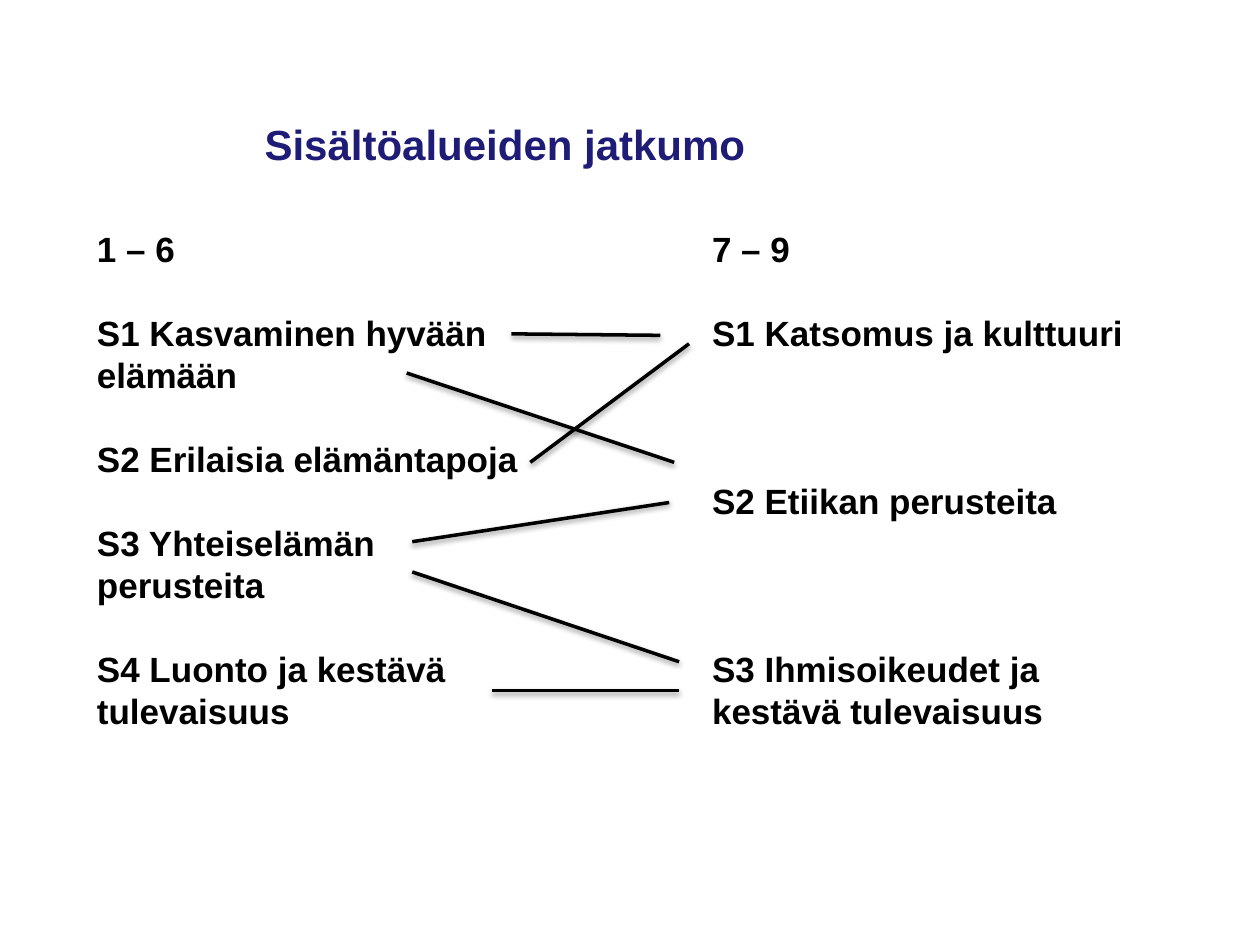
"""Build the slide on how the content areas continue from grades 1–6 to 7–9."""
from lxml import etree
from pptx import Presentation
from pptx.dml.color import RGBColor
from pptx.enum.shapes import MSO_CONNECTOR
from pptx.enum.text import MSO_ANCHOR, MSO_AUTO_SIZE, PP_ALIGN
from pptx.oxml import parse_xml
from pptx.oxml.ns import qn
from pptx.util import Cm, Pt

STRAIGHT = MSO_CONNECTOR.STRAIGHT
TOP, BOTTOM = MSO_ANCHOR.TOP, MSO_ANCHOR.BOTTOM
NO_AUTOFIT = MSO_AUTO_SIZE.NONE
LEFT = PP_ALIGN.LEFT

NAVY = RGBColor(0x1E, 0x1C, 0x77)
BLACK = RGBColor(0, 0, 0)
FONT = "Arial"
LINE_PITCH = 24

SHADOW = (
    '<a:effectLst xmlns:a="http://schemas.openxmlformats.org/drawingml/2006/main">'
    '<a:outerShdw blurRad="40000" dist="20000" dir="5400000" rotWithShape="0">'
    '<a:srgbClr val="000000"><a:alpha val="38000"/></a:srgbClr>'
    '</a:outerShdw></a:effectLst>'
)

COLUMN_TOP, COLUMN_WIDTH, COLUMN_HEIGHT = 4.45, 9.6, 13.77
GRADES_1_6 = [
    ("1 – 6", 0),
    ("S1 Kasvaminen hyvään elämään", 1),
    ("S2 Erilaisia elämäntapoja", 1),
    ("S3 Yhteiselämän perusteita", 1),
    ("S4 Luonto ja kestävä tulevaisuus", 1),
]
GRADES_7_9 = [
    ("7 – 9", 0),
    ("S1 Katsomus ja kulttuuri", 1),
    ("S2 Etiikan perusteita", 3),
    ("S3 Ihmisoikeudet ja kestävä tulevaisuus", 3),
]
CONTINUITIES = [
    (9.91, 13.92, 13.69, 13.92),
    (13.69, 13.34, 8.31, 11.53),
    (8.31, 10.92, 13.49, 10.13),
    (10.69, 9.32, 13.89, 6.93),
    (13.59, 9.32, 8.2, 7.52),
    (13.31, 6.76, 10.31, 6.73),
]


def place(holder, left, top, width, height, anchor):
    holder.left, holder.top = Cm(left), Cm(top)
    holder.width, holder.height = Cm(width), Cm(height)
    frame = holder.text_frame
    frame.word_wrap = True
    frame.auto_size = NO_AUTOFIT
    frame.vertical_anchor = anchor
    return frame


def format_paragraph(paragraph, size, color, pitch, gap=0):
    paragraph.alignment = LEFT
    paragraph.line_spacing = Pt(pitch)
    paragraph.space_before = Pt(gap)
    paragraph.space_after = Pt(0)
    for run in paragraph.runs:
        run.font.name = FONT
        run.font.size = Pt(size)
        run.font.bold = True
        run.font.color.rgb = color


def remove_bullet(paragraph):
    properties = paragraph._p.get_or_add_pPr()
    properties.set("marL", "0")
    properties.set("indent", "0")
    etree.SubElement(properties, qn("a:buNone"))


def fill_title(title):
    frame = place(title, 5.08, 0.43, 19.48, 3.1, BOTTOM)
    frame.text = "Sisältöalueiden jatkumo"
    format_paragraph(frame.paragraphs[0], 24, NAVY, 30)


def fill_column(body, left, areas):
    frame = place(body, left, COLUMN_TOP, COLUMN_WIDTH, COLUMN_HEIGHT, TOP)
    frame.text = "\n".join(area for area, _ in areas)
    for paragraph, (_, lines_before) in zip(frame.paragraphs, areas):
        remove_bullet(paragraph)
        format_paragraph(paragraph, 20, BLACK, LINE_PITCH, lines_before * LINE_PITCH)


def add_continuity(slide, ends):
    link = slide.shapes.add_connector(STRAIGHT, *map(Cm, ends))
    link.line.color.rgb = BLACK
    link.line.width = Pt(2)
    link._element.spPr.append(parse_xml(SHADOW))


def main():
    deck = Presentation()
    deck.slide_width, deck.slide_height = Cm(25.4), Cm(19.05)
    slide = deck.slides.add_slide(deck.slide_layouts[3])
    title, lower_grades, upper_grades = slide.placeholders
    fill_title(title)
    fill_column(lower_grades, 1.7, GRADES_1_6)
    fill_column(upper_grades, 14.1, GRADES_7_9)
    for ends in CONTINUITIES:
        add_continuity(slide, ends)
    deck.save("out.pptx")


if __name__ == "__main__":
    main()
